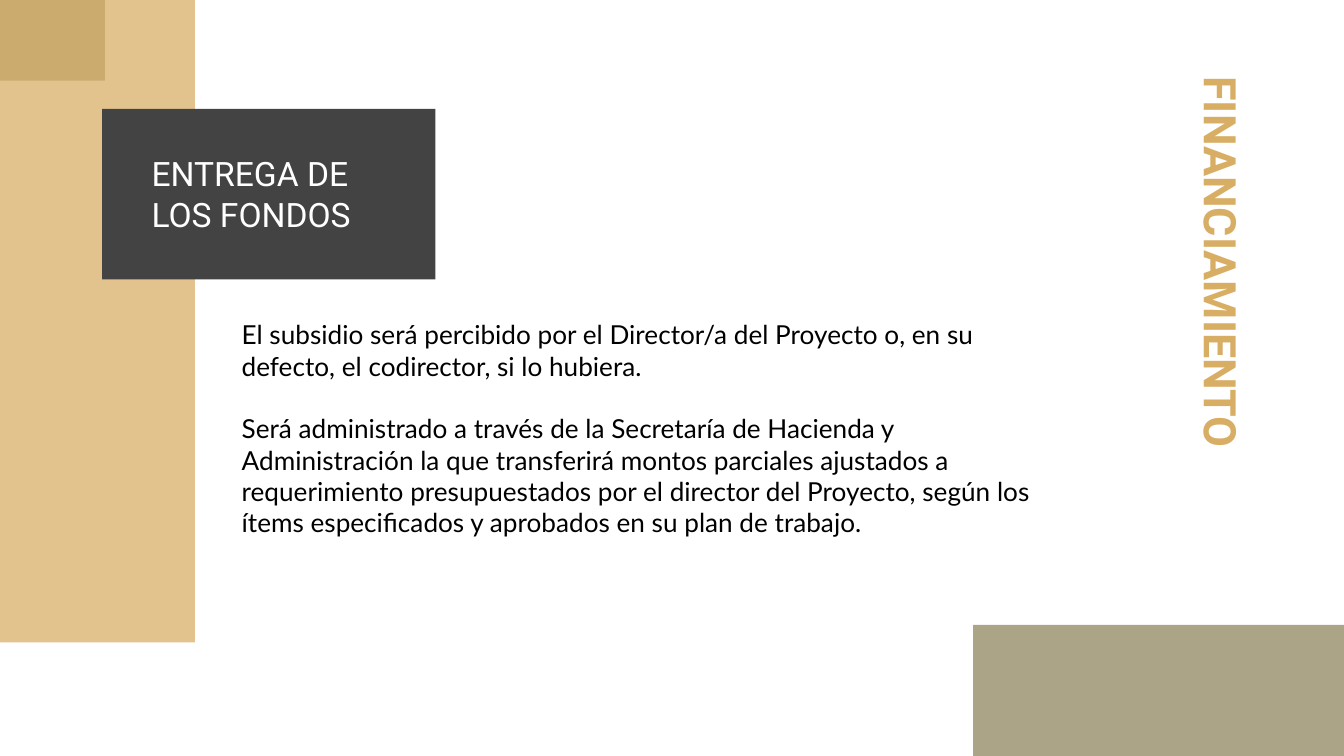
from lxml import etree
from pptx import Presentation
from pptx.dml.color import RGBColor
from pptx.enum.shapes import MSO_SHAPE as Shape
from pptx.enum.text import MSO_ANCHOR as Anchor
from pptx.oxml.ns import qn
from pptx.util import Inches, Pt

GOLD = RGBColor(0xD8, 0xAE, 0x65)
OLIVE = RGBColor(0xAB, 0xA4, 0x87)
CHARCOAL = RGBColor(0x43, 0x43, 0x43)
BLACK = RGBColor(0, 0, 0)
WHITE = RGBColor(0xFF, 0xFF, 0xFF)

BODY = [
    "El subsidio será percibido por el Director/a del Proyecto o, en su "
    "defecto, el codirector, si lo hubiera.",
    "Será administrado a través de la Secretaría de Hacienda y Administración "
    "la que transferirá montos parciales ajustados a requerimiento "
    "presupuestados por el director del Proyecto, según los ítems "
    "especificados y aprobados en su plan de trabajo.",
]


def add_block(page, left, top, width, height, color, opacity=100):
    """Add a plain rectangle; opacity is a percentage."""
    block = page.shapes.add_shape(
        Shape.RECTANGLE, Inches(left), Inches(top), Inches(width), Inches(height))
    block.shadow.inherit = False
    block.line.fill.background()
    block.fill.solid()
    block.fill.fore_color.rgb = color
    if opacity < 100:
        color_node = block._element.spPr.find(qn("a:solidFill"))[0]
        etree.SubElement(color_node, qn("a:alpha")).set("val", str(opacity * 1000))


def add_text(page, left, top, width, height, paragraphs, *, font, size, color,
             bold=False, anchor=Anchor.TOP, rotation=0, gap=0):
    """Add a text box; gap is the space in points between paragraphs."""
    box = page.shapes.add_textbox(
        Inches(left), Inches(top), Inches(width), Inches(height))
    box.rotation = rotation
    frame = box.text_frame
    frame.word_wrap = True
    frame.vertical_anchor = anchor
    frame.margin_left = frame.margin_right = Inches(0.1)
    frame.margin_top = frame.margin_bottom = Inches(0.1)
    for index, text in enumerate(paragraphs):
        para = frame.add_paragraph() if index else frame.paragraphs[0]
        para.space_before = Pt(gap if index else 0)
        span = para.add_run()
        span.text = text
        span.font.name = font
        span.font.size = Pt(size)
        span.font.bold = bold
        span.font.color.rgb = color


def main():
    deck = Presentation()
    deck.slide_width = Inches(10)
    deck.slide_height = deck.slide_width * 9 // 16
    page = deck.slides.add_slide(deck.slide_layouts[6])

    add_text(page, 7.22, 2.11, 3.81, 0.53, ["FINANCIAMIENTO"],
             font="Roboto", size=24, color=GOLD, bold=True, rotation=90)

    add_block(page, 0, 0, 0.78, 0.6, OLIVE)
    add_block(page, 7.24, 4.65, 2.84, 0.98, OLIVE)
    add_block(page, 0, 0, 1.45, 4.78, GOLD, opacity=73)
    add_block(page, 0.76, 0.81, 2.48, 1.27, CHARCOAL)

    add_text(page, 1.7, 2.27, 6.3, 1.22, BODY,
             font="Lato", size=14, color=BLACK, gap=16.8)
    add_text(page, 1.03, 1.42, 2.09, 0.42, ["ENTREGA DE LOS FONDOS"],
             font="Roboto", size=18, color=WHITE, anchor=Anchor.BOTTOM)

    deck.save("out.pptx")


if __name__ == "__main__":
    main()
